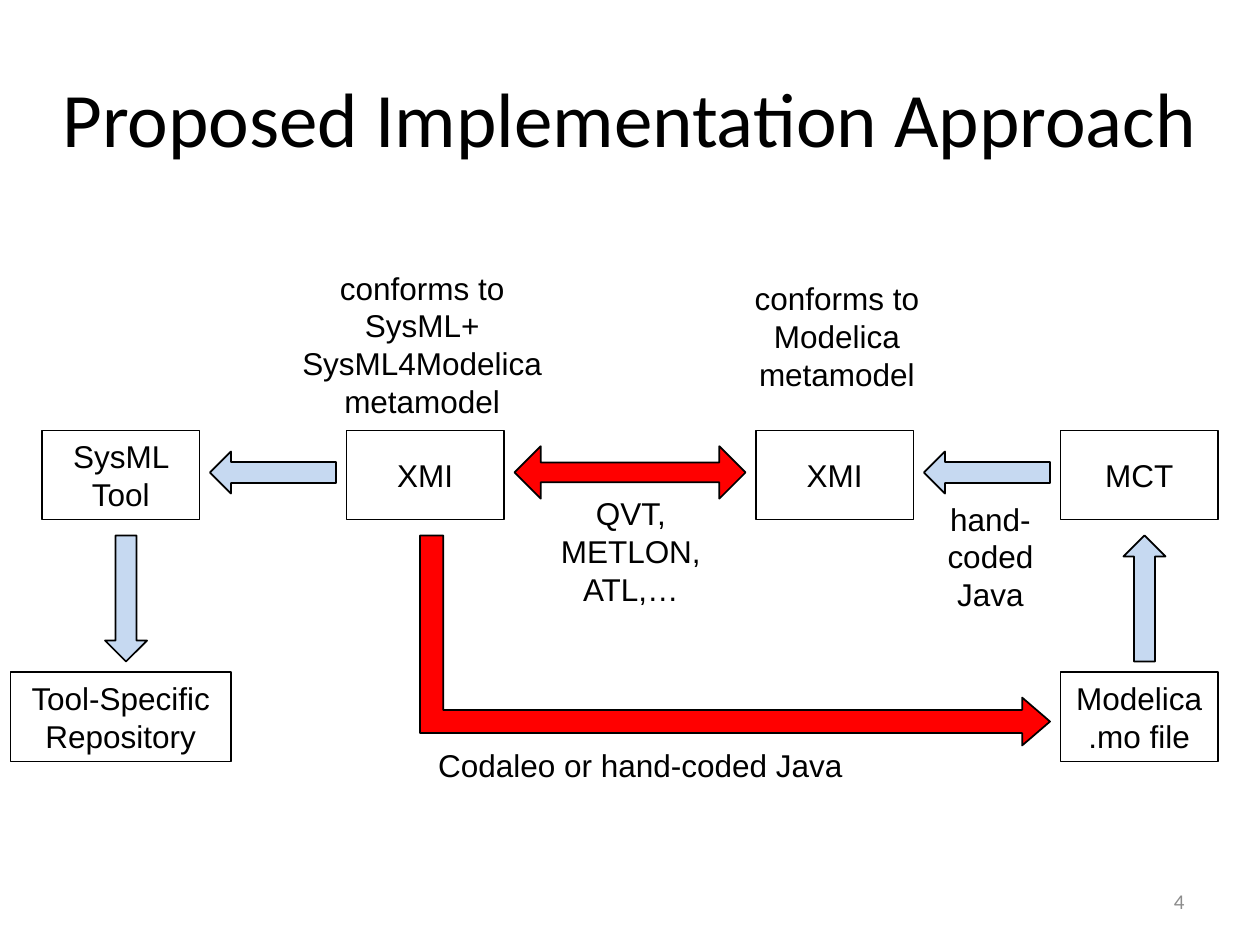
from pptx import Presentation
from pptx.dml.color import RGBColor
from pptx.enum.shapes import MSO_SHAPE as Preset
from pptx.enum.text import MSO_ANCHOR as Anchor, MSO_AUTO_SIZE as AutoSize, PP_ALIGN as Align
from pptx.util import Pt

COLORS = {"ink": "000000", "number": "8C8C8C", "step": "C6D9F1", "transform": "FF0000"}
BOX_WIDTH, BOX_HEIGHT = 90, 51
STEP_WIDTH, STEP_HEIGHT = 72, 24


def color(name):
    return RGBColor.from_string(COLORS[name])


def write(frame, text, size=18, font="Arial", ink="ink", align=Align.CENTER,
          anchor=Anchor.MIDDLE, wrap=True, fit=AutoSize.NONE):
    """Fill a text frame; a vertical tab in the text breaks a line."""
    frame.text = text
    frame.word_wrap = wrap
    frame.auto_size = fit
    frame.vertical_anchor = anchor
    for para in frame.paragraphs:
        para.alignment = align
        for span in para.runs:
            span.font.size = Pt(size)
            span.font.name = font
            span.font.color.rgb = color(ink)


def add_preset(slide, preset, left, top, width, height, fill=None, line=1, turn=0, adjust=()):
    shape = slide.shapes.add_shape(preset, Pt(left), Pt(top), Pt(width), Pt(height))
    shape.shadow.inherit = False
    shape.rotation = turn
    for index, value in enumerate(adjust):
        shape.adjustments[index] = value
    if fill:
        shape.fill.solid()
        shape.fill.fore_color.rgb = color(fill)
    else:
        shape.fill.background()
    shape.line.color.rgb = color("ink")
    shape.line.width = Pt(line)
    return shape


def add_box(slide, text, left, top, width=BOX_WIDTH):
    box = add_preset(slide, Preset.RECTANGLE, left, top, width, BOX_HEIGHT, line=0.75)
    write(box.text_frame, text)


def add_step(slide, left, top, turn=0):
    add_preset(slide, Preset.LEFT_ARROW, left, top, STEP_WIDTH, STEP_HEIGHT, "step", turn=turn)


def add_label(slide, text, left, top, width, height, **style):
    label = slide.shapes.add_textbox(Pt(left), Pt(top), Pt(width), Pt(height))
    write(label.text_frame, text, **style)


def place_title(slide, left, top, width, height):
    title = slide.shapes.title
    title.left, title.top, title.width, title.height = map(Pt, (left, top, width, height))
    write(title.text_frame, "Proposed Implementation Approach", size=44, font="Calibri")


def place_tool_chain(slide, left, top):
    """Upper row: four boxes with the arrows between them and their labels."""
    for text, offset in (("SysML Tool", 0), ("XMI", 174), ("XMI", 408), ("MCT", 582)):
        add_box(slide, text, left + offset, top)
    for offset in (96, 504):
        add_step(slide, left + offset, top + 12)
    add_preset(slide, Preset.LEFT_RIGHT_ARROW, left + 270, top + 9, 132, 30,
               "transform", adjust=(0.375, 0.5))

    labels = (
        ("conforms to\nSysML+\vSysML4Modelica\vmetamodel", 141, -96, 152.5, 94.5),
        ("conforms to\vModelica\vmetamodel", 399.5, -90, 109.5, 72.7),
        ("QVT,\vMETLON,\vATL,…", 288, 32.7, 97, 72.7),
        ("hand-\vcoded\vJava", 510, 36, 64, 72.7),
    )
    for text, across, down, width, height in labels:
        add_label(slide, text, left + across, top + down, width, height,
                  anchor=Anchor.TOP, wrap=False, fit=AutoSize.SHAPE_TO_FIT_TEXT)


def place_storage(slide, left, top):
    """Lower row: the stored files, linked upwards to the tool chain."""
    add_box(slide, "Tool-Specific Repository", left, top, width=126)
    add_box(slide, "Modelica\v.mo file", left + 600, top)
    add_step(slide, left + 30, top - 54, turn=270)
    add_step(slide, left + 612, top - 54, turn=90)
    # Direct path from XMI to the Modelica file
    add_preset(slide, Preset.BENT_UP_ARROW, left + 354, top - 198, 120, 360,
               "transform", turn=90, adjust=(0.11, 0.114, 0.133))
    add_label(slide, "Codaleo or hand-coded Java", left + 228, top + 38.6, 264, 29,
              anchor=Anchor.TOP, fit=AutoSize.SHAPE_TO_FIT_TEXT)


def place_number(slide, left, top, width, height):
    add_label(slide, "4", left, top, width, height, size=12, font="Calibri",
              ink="number", align=Align.RIGHT)


def main():
    deck = Presentation()
    deck.slide_width, deck.slide_height = Pt(720), Pt(540)
    slide = deck.slides.add_slide(deck.slide_layouts[5])
    place_title(slide, 24, 21.6, 672, 90)
    place_tool_chain(slide, 24, 246)
    place_storage(slide, 6, 384)
    place_number(slide, 516, 500.5, 168, 28.75)
    deck.save("out.pptx")


if __name__ == "__main__":
    main()
